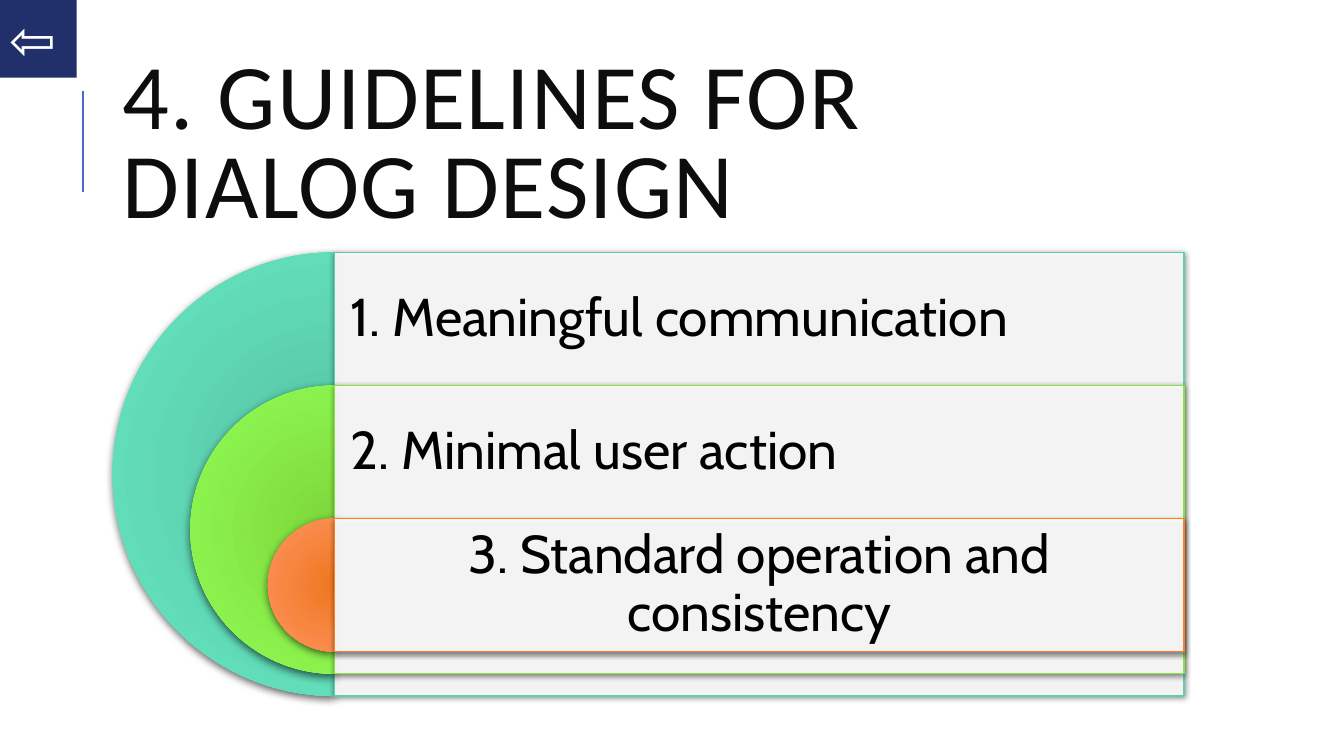
from lxml import etree
from pptx import Presentation
from pptx import util as u
from pptx.dml.color import RGBColor
from pptx.enum import shapes, text
from pptx.oxml import parse_xml
from pptx.oxml.ns import qn

NS = 'xmlns:a="http://schemas.openxmlformats.org/drawingml/2006/main"'
BLACK = RGBColor(0x00, 0x00, 0x00)
WHITE = RGBColor(0xFF, 0xFF, 0xFF)
INK = RGBColor(0x0D, 0x0D, 0x0D)
NAVY = RGBColor(0x21, 0x30, 0x6A)
BLUE = RGBColor(0x4E, 0x67, 0xC8)

# Label, alignment, inner and outer pie colours, panel border
LEFT, MID = text.PP_ALIGN.LEFT, text.PP_ALIGN.CENTER
RINGS = [
    ("1. Meaningful communication", LEFT, RGBColor(0x57, 0xC0, 0xA3),
     RGBColor(0x65, 0xEA, 0xC2), RGBColor(0x5D, 0xCE, 0xAF)),
    ("2. Minimal user action", LEFT, RGBColor(0x7D, 0xD6, 0x3B),
     RGBColor(0x92, 0xFF, 0x55), RGBColor(0x86, 0xE6, 0x40)),
    ("3. Standard operation and consistency", MID, RGBColor(0xEE, 0x77, 0x1F),
     RGBColor(0xFF, 0x94, 0x61), RGBColor(0xFF, 0x80, 0x21)),
]


def write(shape, words, font, size, color, align=LEFT, inset=None, wrap=True,
          anchor=text.MSO_ANCHOR.MIDDLE, space=1.0):
    frame = shape.text_frame
    frame.word_wrap = wrap
    frame.vertical_anchor = anchor
    if inset is not None:
        frame.margin_left = frame.margin_right = u.Cm(inset)
        frame.margin_top = frame.margin_bottom = u.Cm(inset)
    para = frame.paragraphs[0]
    para.text = words
    para.alignment = align
    para.line_spacing = space
    para.font.name = font
    para.font.size = u.Pt(size)
    para.font.color.rgb = color
    return para


def shade(shape, alpha, blur, dist):
    """Drop a soft black shadow straight down."""
    shape.shadow.inherit = False
    glow = shape._element.spPr.find(qn("a:effectLst"))
    glow.append(parse_xml(
        f'<a:outerShdw {NS} blurRad="{u.Pt(blur)}" dist="{u.Pt(dist)}" '
        f'dir="5400000" algn="ctr" rotWithShape="0"><a:srgbClr val="{BLACK}">'
        f'<a:alpha val="{alpha * 1000}"/></a:srgbClr></a:outerShdw>'))


def radial(shape, inner, outer):
    shape.fill.background()
    old = shape._element.spPr.find(qn("a:noFill"))
    old.getparent().replace(old, parse_xml(
        f'<a:gradFill {NS} rotWithShape="1"><a:gsLst>'
        f'<a:gs pos="0"><a:srgbClr val="{inner}"/></a:gs>'
        f'<a:gs pos="100000"><a:srgbClr val="{outer}"/></a:gs></a:gsLst>'
        '<a:path path="circle"><a:fillToRect l="100000" t="100000" '
        'r="100000" b="100000"/></a:path></a:gradFill>'))


def head(slide, x, y, w, h):
    # Accent rule
    rule = slide.shapes.add_connector(
        shapes.MSO_CONNECTOR.STRAIGHT, u.Cm(x - 0.74), u.Cm(y + 3.2),
        u.Cm(x - 0.74), u.Cm(y + 0.66))
    rule.line.color.rgb = BLUE
    rule.line.width = u.Pt(1.5)
    etree.SubElement(rule._element.spPr, qn("a:effectLst"))
    # Title
    box = slide.shapes.add_textbox(u.Cm(x), u.Cm(y), u.Cm(w), u.Cm(h))
    para = write(box, "4. GUIDELINES FOR DIALOG DESIGN", "Calibri", 66, INK,
                 space=0.8)
    para.runs[0].font._element.set("spc", "100")


def target(slide, x, y, w, h):
    """Nested half discs, each with a panel and a label in its top row."""
    row, step = 0.3 * h, 0.35 * h
    mid = x + h / 2
    wide = w - h / 2
    for i, (words, align, inner, outer, edge) in enumerate(RINGS):
        top, size = y + i * row, h - i * step
        # Half disc
        pie = slide.shapes.add_shape(
            shapes.MSO_SHAPE.PIE, u.Cm(mid - size / 2), u.Cm(top),
            u.Cm(size), u.Cm(size))
        pie.adjustments[0] = 54
        pie.adjustments[1] = 162
        radial(pie, inner, outer)
        pie.line.fill.background()
        shade(pie, 60, 6, 2)
        # Panel
        panel = slide.shapes.add_shape(
            shapes.MSO_SHAPE.RECTANGLE, u.Cm(mid), u.Cm(top),
            u.Cm(wide), u.Cm(size))
        panel.fill.solid()
        panel.fill.fore_color.rgb = WHITE
        tint = panel._element.spPr.find(qn("a:solidFill"))[0]
        etree.SubElement(tint, qn("a:alpha"), val="90000")
        panel.line.color.rgb = edge
        panel.line.width = u.Pt(0.75)
        shade(panel, 50, 4, 1)
        # Label
        label = slide.shapes.add_textbox(
            u.Cm(mid), u.Cm(top), u.Cm(wide), u.Cm(row))
        write(label, words, "Cabin", 38, BLACK, align, inset=0.41, space=0.9)


def back(slide, x, y, w, h):
    tab = slide.shapes.add_shape(
        shapes.MSO_SHAPE.RECTANGLE, u.Cm(x), u.Cm(y), u.Cm(w), u.Cm(h))
    tab.shadow.inherit = False
    tab.fill.solid()
    tab.fill.fore_color.rgb = NAVY
    tab.line.fill.background()
    write(tab, "⇦", "Cabin", 40, WHITE, wrap=False,
          anchor=text.MSO_ANCHOR.TOP)


def main():
    deck = Presentation()
    deck.slide_width, deck.slide_height = u.Cm(33.87), u.Cm(19.05)
    slide = deck.slides.add_slide(deck.slide_layouts[6])
    head(slide, 2.84, 1.63, 27, 4.17)
    target(slide, 2.84, 6.36, 27, 11.18)
    back(slide, 0, 0, 1.93, 1.96)
    deck.save("out.pptx")


if __name__ == "__main__":
    main()
